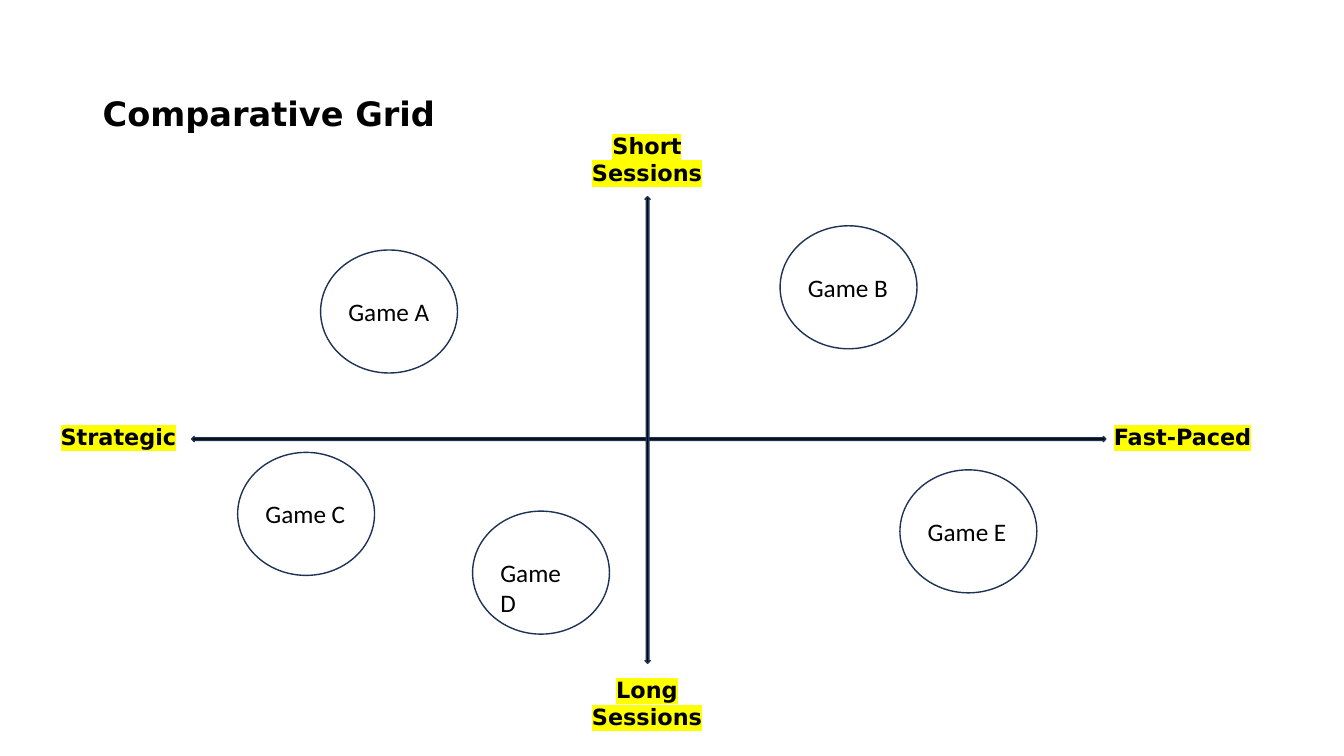
from lxml import etree
from pptx import Presentation
from pptx.dml.color import RGBColor
from pptx.enum import shapes, text
from pptx.oxml.ns import qn
from pptx.util import Cm, Pt

THEME = {
    "ink": RGBColor.from_string("000000"),
    "outline": RGBColor.from_string("1E3256"),
    "marker": "FFFF00",
    "title": {"name": "DejaVu Sans", "size": Pt(24), "bold": True},
    "axis": {"name": "DejaVu Sans", "size": Pt(16), "bold": True},
    "game": {"name": "Calibri", "size": Pt(18), "bold": False},
}
LEFT, CENTER = text.PP_ALIGN.LEFT, text.PP_ALIGN.CENTER
INSETS = {"margin_left": Cm(0.18), "margin_right": Cm(0.18),
          "margin_top": Cm(0.1), "margin_bottom": Cm(0.1)}

# Axis ends: wording, box in cm, alignment
AXIS_LABELS = [
    ("Short Sessions", (14.68, 3.23, 3.25, 1.55), CENTER),
    ("Long Sessions", (14.02, 16.94, 4.57, 1.55), CENTER),
    ("Fast-Paced", (27.89, 10.57, 4.8, 0.86), LEFT),
    ("Strategic", (1.35, 10.57, 3.45, 0.86), LEFT),
]
# Axes: box in cm before turning, rotation in degrees
AXES = [((4.83, 11, 23.04, 0.13), 0), ((10.44, 10.77, 11.76, 0.13), 90)]

# Games: top left corner of each circle in cm
GAMES = {"A": (8.08, 6.3), "B": (19.66, 5.69), "C": (5.99, 11.4),
         "D": (11.91, 12.88), "E": (22.68, 11.84)}
CIRCLE_SIZE = (3.45, 3.1)
NAME_SIZE = (2.55, 1.02)


def set_all(obj, values):
    for name, value in values.items():
        setattr(obj, name, value)


def add_text(slide, words, box, style, align=LEFT, frame=None):
    tf = slide.shapes.add_textbox(*map(Cm, box)).text_frame
    set_all(tf, {"word_wrap": True, **(frame or {})})
    p = tf.paragraphs[0]
    p.alignment = align
    r = p.add_run()
    r.text = words
    set_all(r.font, THEME[style])
    r.font.color.rgb = THEME["ink"]
    return r


def highlight(r):
    fill = r.font._element.find(qn("a:solidFill"))
    mark = etree.Element(qn("a:highlight"))
    etree.SubElement(mark, qn("a:srgbClr"), val=THEME["marker"])
    fill.addnext(mark)


def add_outlined(slide, kind, box, fill=None):
    sp = slide.shapes.add_shape(kind, *map(Cm, box))
    sp.shadow.inherit = False
    if fill is None:
        sp.fill.background()
    else:
        sp.fill.solid()
        sp.fill.fore_color.rgb = fill
    sp.line.color.rgb = THEME["outline"]
    sp.line.width = Pt(1)
    return sp


def add_game(slide, letter, corner):
    add_outlined(slide, shapes.MSO_SHAPE.OVAL, (*corner, *CIRCLE_SIZE))
    # The name sits in the middle of its circle
    place = [c + (outer - inner) / 2
             for c, outer, inner in zip(corner, CIRCLE_SIZE, NAME_SIZE)]
    add_text(slide, f"Game {letter}", (*place, *NAME_SIZE), "game",
             frame={"word_wrap": False})


def main():
    prs = Presentation()
    prs.slide_width, prs.slide_height = Cm(33.87), Cm(19.05)
    slide = prs.slides.add_slide(prs.slide_layouts[6])

    # Title
    r = add_text(slide, "Comparative Grid", (2.34, 1.02, 29.21, 3.68), "title",
                 frame={"vertical_anchor": text.MSO_ANCHOR.MIDDLE})

    # Axes and their ends
    for words, box, align in AXIS_LABELS:
        r = add_text(slide, words, box, "axis", align, INSETS)
        highlight(r)
    for box, turn in AXES:
        arrow = add_outlined(slide, shapes.MSO_SHAPE.LEFT_RIGHT_ARROW, box,
                             THEME["ink"])
        arrow.rotation = turn

    # Games
    for letter, corner in GAMES.items():
        add_game(slide, letter, corner)

    prs.save("out.pptx")


main()
